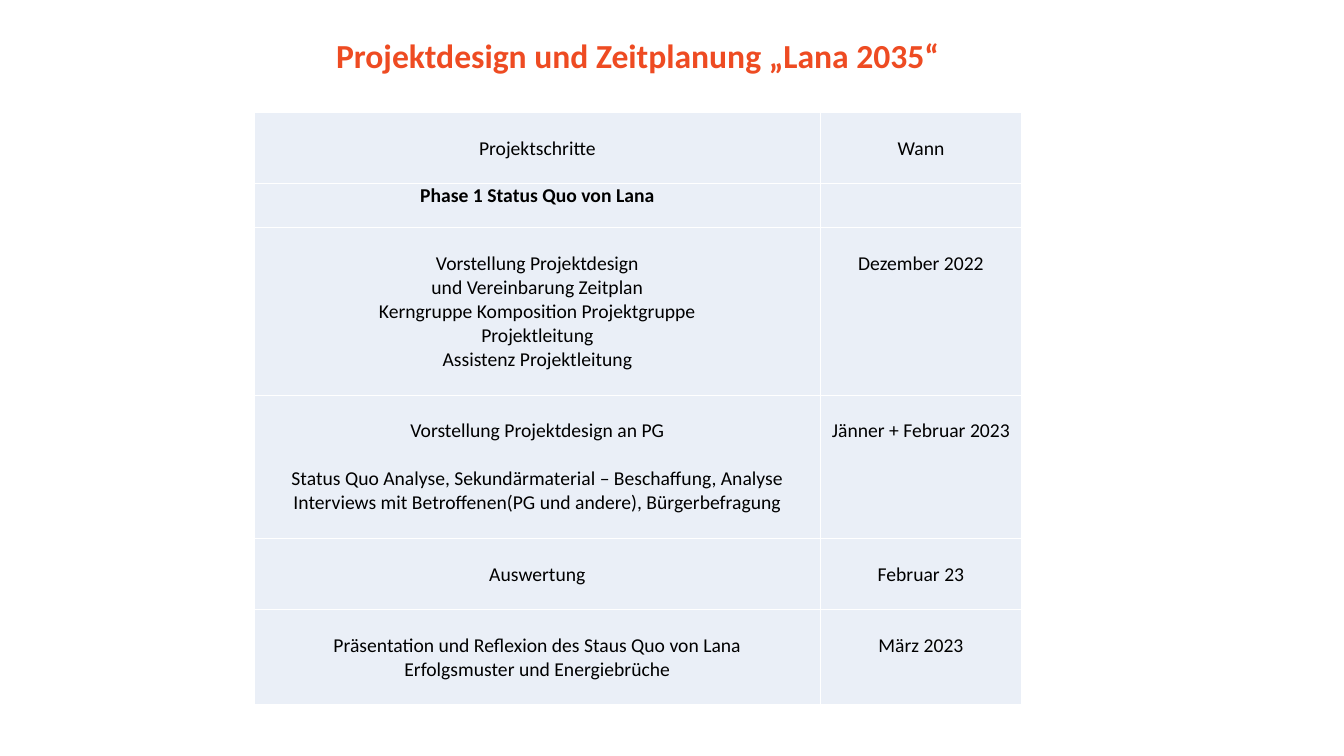
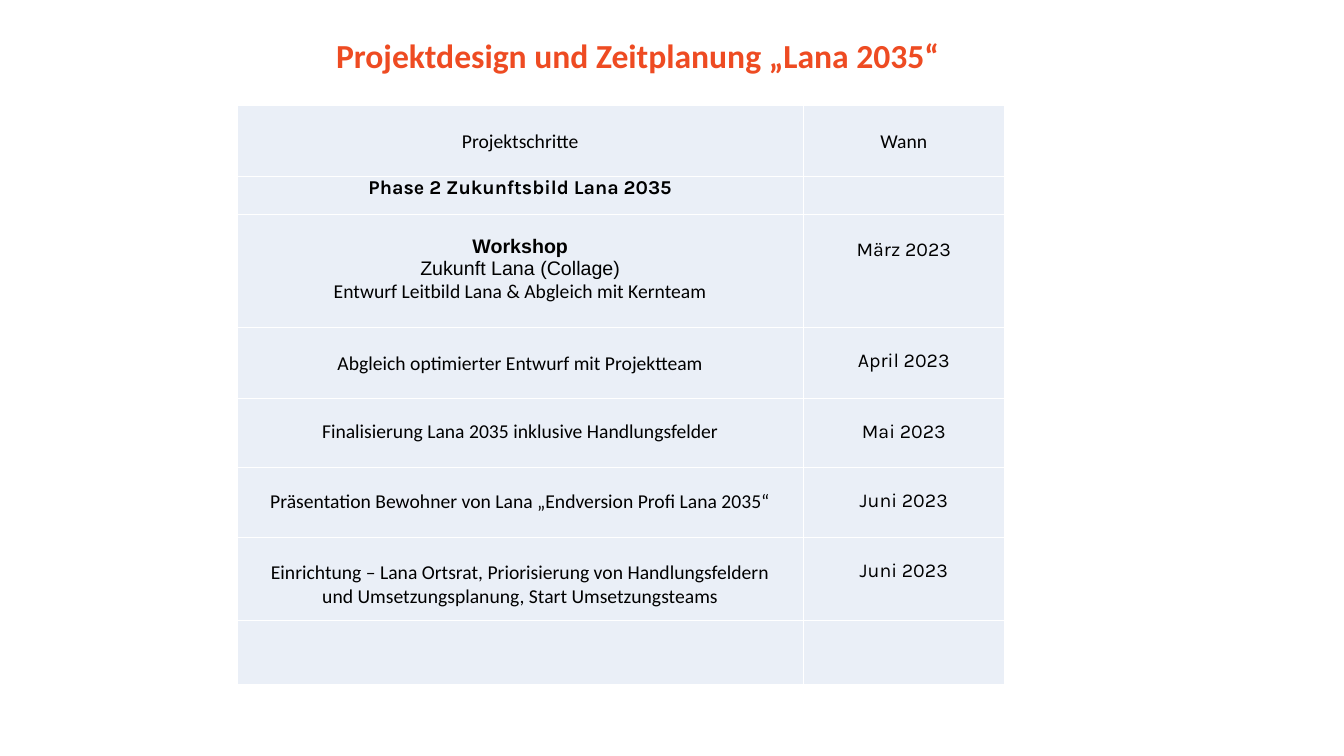
from dataclasses import dataclass

from lxml import etree
from pptx import Presentation
from pptx.dml.color import RGBColor
from pptx.enum.text import MSO_ANCHOR, PP_ALIGN
from pptx.oxml.ns import qn
from pptx.util import Inches, Pt

LINE = 0.24  # height of one line of body text, in inches


def color(value):
    return RGBColor.from_string(value)


@dataclass
class Line:
    text: str
    font: str = "Calibri"
    bold: bool = False
    before: int = 0


@dataclass
class Step:
    height: float
    lines: list
    date: str = ""
    gap: float = LINE
    date_gap: float = LINE
    side: float = 0.01


class Deck:
    ACCENT, TEXT, CELL, BORDER = "EE4B22", "000000", "EAEFF7", "FFFFFF"
    FONT, TITLE_SIZE, BODY_SIZE = "Calibri", 24, 14
    COLUMNS = (5.62, 1.99)

    def __init__(self):
        self.presentation = Presentation()
        self.presentation.slide_width = Inches(13.33)
        self.presentation.slide_height = Inches(7.5)
        self.slide = None

    def add_slide(self, title):
        layout = self.presentation.slide_layouts[6]
        self.slide = self.presentation.slides.add_slide(layout)
        self.title(title)

    def fill_paragraph(self, paragraph, line, size, font_color):
        paragraph.text = line.text
        paragraph.alignment = PP_ALIGN.CENTER
        paragraph.space_before = Pt(line.before)
        for run in paragraph.runs:
            run.font.name = line.font
            run.font.size = Pt(size)
            run.font.bold = line.bold
            run.font.color.rgb = color(font_color)

    def title(self, text):
        shape = self.slide.shapes.add_textbox(
            Inches(2.25), Inches(0.3), Inches(8.15), Inches(0.5))
        shape.text_frame.word_wrap = True
        self.fill_paragraph(shape.text_frame.paragraphs[0],
                            Line(text, self.FONT, bold=True),
                            self.TITLE_SIZE, self.ACCENT)

    def border(self, cell):
        properties = cell._tc.get_or_add_tcPr()
        for side in ("a:lnL", "a:lnR", "a:lnT", "a:lnB"):
            edge = etree.SubElement(properties, qn(side), w=str(Pt(1)))
            fill = etree.SubElement(edge, qn("a:solidFill"))
            etree.SubElement(fill, qn("a:srgbClr"), val=self.BORDER)

    def cell(self, cell, lines, gap, side):
        self.border(cell)
        cell.fill.solid()
        cell.fill.fore_color.rgb = color(self.CELL)
        cell.vertical_anchor = MSO_ANCHOR.TOP
        cell.margin_left = cell.margin_right = Inches(side)
        cell.margin_top, cell.margin_bottom = Inches(gap), 0
        for index, line in enumerate(lines):
            frame = cell.text_frame
            paragraph = frame.add_paragraph() if index else frame.paragraphs[0]
            self.fill_paragraph(paragraph, line, self.BODY_SIZE, self.TEXT)

    def schedule(self, left, top, phase, steps, date_font):
        header = Step(0.7, [Line("Projektschritte")])
        rows = [header, phase, *steps]
        table = self.slide.shapes.add_table(
            len(rows), len(self.COLUMNS), Inches(left), Inches(top),
            Inches(sum(self.COLUMNS)),
            Inches(sum(row.height for row in rows))).table
        table.first_row = table.horz_banding = False
        for column, width in zip(table.columns, self.COLUMNS):
            column.width = Inches(width)
        for index, row in enumerate(rows):
            table.rows[index].height = Inches(row.height)
            date = [Line(row.date, date_font)] if row.date else []
            if row is header:
                date = [Line("Wann")]
            self.cell(table.cell(index, 0), row.lines, row.gap, row.side)
            self.cell(table.cell(index, 1), date, row.date_gap if date else 0, 0.01)


def main():
    deck = Deck()
    title = "Projektdesign und Zeitplanung „Lana 2035“"

    # Phase 1
    deck.add_slide(title)
    deck.schedule(
        2.52, 1.12,
        Step(0.44, [Line("Phase 1 Status Quo von Lana", bold=True)], gap=0),
        [
            Step(1.66, [
                Line("Vorstellung Projektdesign"),
                Line("und Vereinbarung Zeitplan"),
                Line("Kerngruppe Komposition Projektgruppe"),
                Line("Projektleitung"),
                Line("Assistenz Projektleitung"),
            ], "Dezember 2022"),
            Step(1.42, [
                Line("Vorstellung Projektdesign an PG"),
                Line("Status Quo Analyse, Sekundärmaterial – Beschaffung, Analyse",
                     before=17),
                Line("Interviews mit Betroffenen(PG und andere), Bürgerbefragung"),
            ], "Jänner + Februar 2023"),
            Step(0.71, [Line("Auswertung")], "Februar 23"),
            Step(0.94, [
                Line("Präsentation und Reflexion des Staus Quo von Lana"),
                Line("Erfolgsmuster und Energiebrüche"),
            ], "März 2023"),
        ],
        date_font="Calibri")

    # Phase 2
    deck.add_slide(title)
    deck.schedule(
        2.35, 1.05,
        Step(0.38, [Line("Phase 2 Zukunftsbild Lana 2035", "Karla", True)], gap=0),
        [
            Step(1.12, [
                Line("Workshop", "Arial", True),
                Line("Zukunft Lana (Collage)", "Arial"),
                Line("Entwurf Leitbild Lana & Abgleich mit Kernteam"),
            ], "März 2023", gap=0.21, side=0.05),
            Step(0.7, [Line("Abgleich optimierter Entwurf mit Projektteam")],
                 "April 2023", date_gap=0.22, side=0.05),
            Step(0.69, [Line("Finalisierung Lana 2035 inklusive Handlungsfelder")],
                 "Mai 2023", gap=0.22, date_gap=0.22, side=0.05),
            Step(0.69, [
                Line("Präsentation Bewohner von Lana „Endversion Profi Lana 2035“"),
            ], "Juni 2023", gap=0.22, date_gap=0.22, side=0.05),
            Step(0.83, [
                Line("Einrichtung – Lana Ortsrat, Priorisierung von Handlungsfeldern"),
                Line("und Umsetzungsplanung, Start Umsetzungsteams"),
            ], "Juni 2023", date_gap=0.22, side=0.05),
            Step(0.63, [], gap=0),
        ],
        date_font="Karla")

    deck.presentation.save("out.pptx")


if __name__ == "__main__":
    main()
